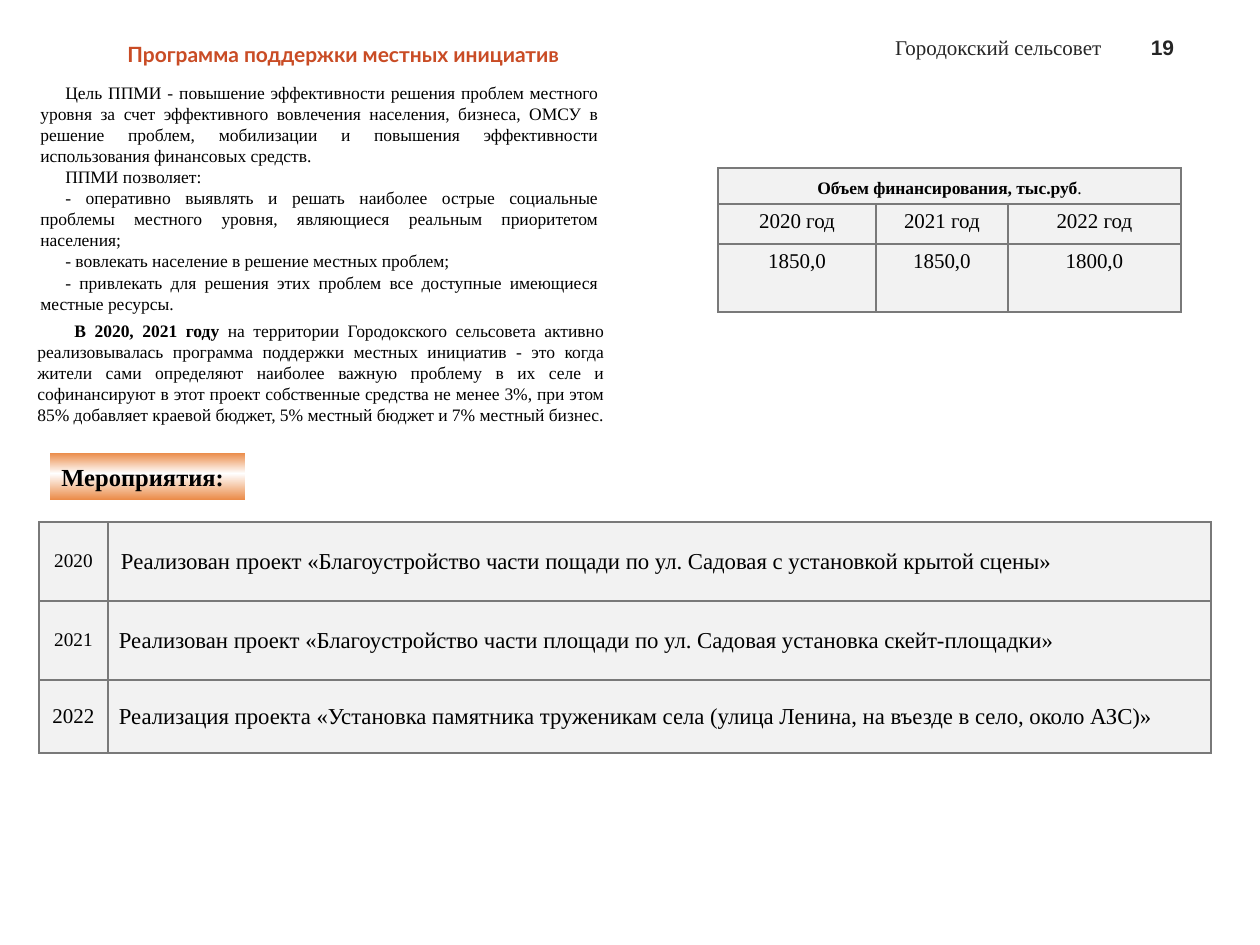
from dataclasses import dataclass
from typing import NamedTuple

from pptx import Presentation
from pptx.dml.color import RGBColor
from pptx.enum.shapes import MSO_SHAPE
from pptx.enum.text import MSO_ANCHOR, MSO_AUTO_SIZE, PP_ALIGN
from pptx.oxml import parse_xml
from pptx.oxml.ns import nsdecls
from pptx.util import Emu, Pt

EMU_PER_PX = 914400 / 126


def px(length: int) -> Emu:
    return Emu(round(length * EMU_PER_PX))


@dataclass(frozen=True)
class Theme:
    serif: str = "Times New Roman"
    sans: str = "Arial"
    heading: str = "Lato"
    black: str = "000000"
    header: str = "262626"
    accent: str = "C94C25"
    orange: str = "EA8640"
    white: str = "FFFFFF"
    cell: str = "F2F2F2"
    border: str = "797979"
    body_size: int = 10
    year_size: int = 11
    label_size: int = 12
    project_size: int = 13
    badge_size: int = 14


THEME = Theme()


class Box(NamedTuple):
    left: int
    top: int
    width: int
    height: int

    def emu(self) -> list[Emu]:
        return [px(length) for length in self]


class Span(NamedTuple):
    text: str
    bold: bool = False


class Style(NamedTuple):
    size: int
    align: PP_ALIGN = PP_ALIGN.CENTER
    color: str = THEME.black
    font: str = THEME.serif
    bold: bool = False
    indent: int = 0


class Cell(NamedTuple):
    spans: list[Span]
    style: Style
    anchor: MSO_ANCHOR = MSO_ANCHOR.TOP
    side: int = 13
    edge: int = 6


def write(frame, paragraphs: list[list[Span]], style: Style) -> None:
    """Fill a text frame with paragraphs that share one style."""
    for index, spans in enumerate(paragraphs):
        para = frame.add_paragraph() if index else frame.paragraphs[0]
        para.alignment = style.align
        if style.indent:
            para._p.get_or_add_pPr().set("indent", str(px(style.indent)))
        para.font.size = Pt(style.size)
        para.font.name = style.font
        para.font.bold = style.bold
        para.font.color.rgb = RGBColor.from_string(style.color)
        for span in spans:
            run = para.add_run()
            run.text = span.text
            if span.bold:
                run.font.bold = True


def add_text(slide, box: Box, paragraphs: list[list[Span]], style: Style,
             anchor: MSO_ANCHOR = MSO_ANCHOR.TOP) -> None:
    frame = slide.shapes.add_textbox(*box.emu()).text_frame
    frame.word_wrap = True
    frame.vertical_anchor = anchor
    write(frame, paragraphs, style)


def add_borders(cell) -> None:
    properties = cell._tc.get_or_add_tcPr()
    for index, side in enumerate(("lnL", "lnR", "lnT", "lnB")):
        properties.insert(index, parse_xml(
            f'<a:{side} {nsdecls("a")} w="12700"><a:solidFill>'
            f'<a:srgbClr val="{THEME.border}"/></a:solidFill></a:{side}>'))


def add_grid(slide, left: int, top: int, widths: list[int], heights: list[int],
             rows: list[list[Cell]]) -> None:
    """Draw a table; a row with a single cell spans every column."""
    box = Box(left, top, sum(widths), sum(heights))
    table = slide.shapes.add_table(len(heights), len(widths), *box.emu()).table
    table.first_row = table.horz_banding = False
    for column, width in zip(table.columns, widths):
        column.width = px(width)
    for row, height in zip(table.rows, heights):
        row.height = px(height)
    for cell in table.iter_cells():
        cell.fill.solid()
        cell.fill.fore_color.rgb = RGBColor.from_string(THEME.cell)
        add_borders(cell)
    for row_index, row in enumerate(rows):
        if len(row) == 1:
            table.cell(row_index, 0).merge(table.cell(row_index, len(widths) - 1))
        for column_index, content in enumerate(row):
            cell = table.cell(row_index, column_index)
            cell.vertical_anchor = content.anchor
            cell.margin_left = cell.margin_right = px(content.side)
            cell.margin_top = cell.margin_bottom = px(content.edge)
            write(cell.text_frame, [content.spans], content.style)


def add_title(slide, box: Box, text: str) -> None:
    title = slide.shapes.title
    title.left, title.top, title.width, title.height = box.emu()
    frame = title.text_frame
    frame.auto_size = MSO_AUTO_SIZE.NONE
    frame.vertical_anchor = MSO_ANCHOR.MIDDLE
    frame.margin_left, frame.margin_right = px(25), 0
    write(frame, [[Span(text)]],
          Style(THEME.label_size, color=THEME.accent, font=THEME.heading, bold=True))


def add_badge(slide, box: Box, text: str) -> None:
    badge = slide.shapes.add_shape(MSO_SHAPE.PENTAGON, *box.emu())
    badge.adjustments[0] = 0
    badge.shadow.inherit = False
    badge.line.color.rgb = RGBColor.from_string(THEME.white)
    badge.line.width = Pt(0.75)
    stops = "".join(
        f'<a:gs pos="{percent * 1000}"><a:srgbClr val="{color}"/></a:gs>'
        for percent, color in ((0, THEME.orange), (44, THEME.white), (100, THEME.orange)))
    badge._element.spPr.insert(2, parse_xml(
        f'<a:gradFill {nsdecls("a")} rotWithShape="1"><a:gsLst>{stops}</a:gsLst>'
        '<a:lin ang="5400000" scaled="0"/></a:gradFill>'))
    badge.text_frame.vertical_anchor = MSO_ANCHOR.MIDDLE
    write(badge.text_frame, [[Span(text)]],
          Style(THEME.badge_size, PP_ALIGN.LEFT, bold=True))


GOALS = [
    "Цель ППМИ - повышение эффективности решения проблем местного уровня за счет "
    "эффективного вовлечения населения, бизнеса, ОМСУ в решение проблем, мобилизации "
    "и повышения эффективности использования финансовых средств.",
    "ППМИ позволяет:",
    "- оперативно выявлять и решать наиболее острые социальные проблемы местного "
    "уровня, являющиеся реальным приоритетом населения;",
    "- вовлекать население в решение местных проблем;",
    "- привлекать для решения этих проблем все доступные имеющиеся местные ресурсы.",
]
SUMMARY = [
    Span("В 2020, 2021 году", bold=True),
    Span(" на территории Городокского сельсовета активно реализовывалась программа "
         "поддержки местных инициатив - это когда жители сами определяют наиболее важную "
         "проблему в их селе и софинансируют в этот проект собственные средства не менее "
         "3%, при этом 85% добавляет краевой бюджет, 5% местный бюджет и 7% местный бизнес."),
]
FUNDING = [("2020 год", "2021 год", "2022 год"), ("1850,0", "1850,0", "1800,0")]
# Year, year size, side margin, edge margin, project
PROJECTS = [
    ("2020", THEME.year_size, 13, 6, "Реализован проект «Благоустройство части пощади "
     "по ул. Садовая с установкой крытой сцены»"),
    ("2021", THEME.year_size, 11, 5, "Реализован проект «Благоустройство части площади "
     "по ул. Садовая установка скейт-площадки»"),
    ("2022", THEME.label_size, 11, 5, "Реализация проекта «Установка памятника труженикам "
     "села (улица Ленина, на въезде в село, около АЗС)»"),
]


def main() -> None:
    deck = Presentation()
    deck.slide_width, deck.slide_height = px(1260), px(945)
    slide = deck.slides.add_slide(deck.slide_layouts[5])

    # Page header and title
    add_text(slide, Box(809, 24, 305, 42), [[Span("Городокский сельсовет")]],
             Style(THEME.label_size, PP_ALIGN.RIGHT, THEME.header), MSO_ANCHOR.BOTTOM)
    add_text(slide, Box(1128, 24, 69, 42), [[Span("19")]],
             Style(THEME.label_size, color=THEME.header, font=THEME.sans, bold=True),
             MSO_ANCHOR.BOTTOM)
    add_title(slide, Box(29, 29, 604, 50), "Программа поддержки местных инициатив")

    # Programme description
    add_text(slide, Box(28, 76, 582, 246), [[Span(goal)] for goal in GOALS],
             Style(THEME.body_size, PP_ALIGN.JUSTIFY, indent=25))
    add_text(slide, Box(25, 314, 591, 140), [SUMMARY],
             Style(THEME.body_size, PP_ALIGN.JUSTIFY, indent=37))

    # Funding table
    heading = Cell([Span("Объем финансирования, тыс.руб", bold=True), Span(".")],
                   Style(THEME.body_size), MSO_ANCHOR.BOTTOM)
    figures = [[Cell([Span(text)], Style(THEME.label_size)) for text in row]
               for row in FUNDING]
    add_grid(slide, 718, 168, [158, 132, 173], [36, 40, 68], [[heading], *figures])

    # Projects by year
    add_badge(slide, Box(49, 452, 197, 49), "Мероприятия:")
    projects = [
        [Cell([Span(text)], style, MSO_ANCHOR.MIDDLE, side, edge)
         for text, style in ((year, Style(size)),
                             (project, Style(THEME.project_size, PP_ALIGN.JUSTIFY)))]
        for year, size, side, edge, project in PROJECTS]
    add_grid(slide, 39, 522, [69, 1103], [79, 79, 73], projects)

    deck.save("out.pptx")


if __name__ == "__main__":
    main()
